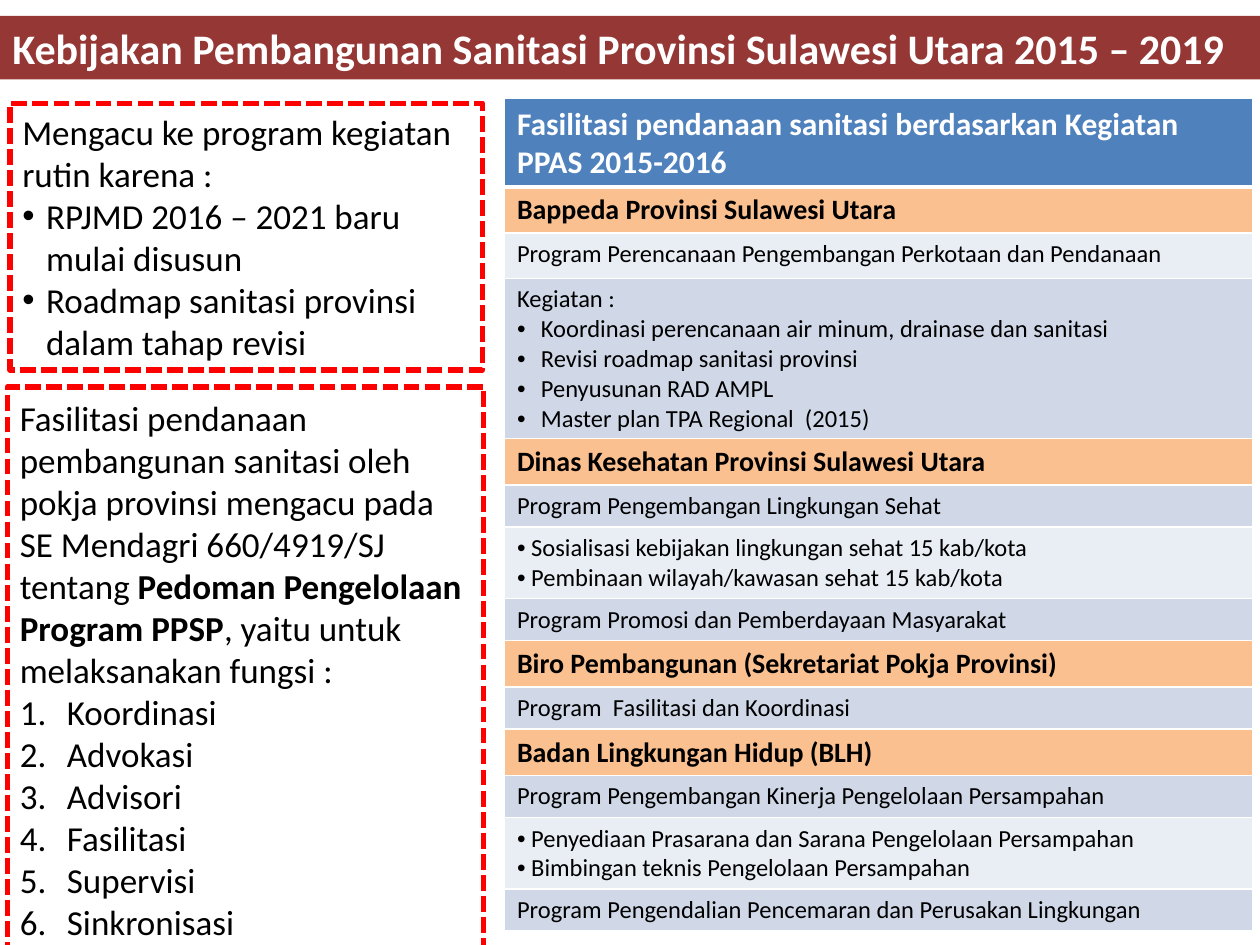
from lxml.etree import SubElement
from pptx import Presentation
from pptx.dml.color import RGBColor
from pptx.enum.dml import MSO_LINE_DASH_STYLE as Dash
from pptx.enum.shapes import MSO_SHAPE as Shape
from pptx.enum.text import MSO_AUTO_SIZE as AutoSize, PP_ALIGN as Align
from pptx.oxml import parse_xml
from pptx.oxml.ns import nsdecls, qn
from pptx.util import Cm, Pt

FONT = "Calibri"
COLORS = {
    "banner": "953735", "dash": "FF0000", "white": "FFFFFF", "black": "000000",
    "header": "4F81BD", "agency": "FAC090", "light": "E9EDF4", "dark": "D0D8E8",
}
HANGING = Cm(0.48)
NUMBER_INDENT = Cm(0.95)

REASONS = [
    "Mengacu ke program kegiatan rutin karena :",
    ("•", "RPJMD 2016 – 2021 baru mulai disusun"),
    ("•", "Roadmap sanitasi provinsi dalam tahap revisi"),
]
GUIDELINE = [
    ["Fasilitasi pendanaan pembangunan sanitasi oleh pokja provinsi mengacu pada "
     "SE Mendagri 660/4919/SJ  tentang ",
     ("Pedoman Pengelolaan Program PPSP", True),
     ", yaitu untuk melaksanakan fungsi :"],
]
FUNCTIONS = ["Koordinasi", "Advokasi", "Advisori", "Fasilitasi", "Supervisi", "Sinkronisasi"]

# Row kind: fill, text size, bold, text colour
ROW_KINDS = {
    "header": ("header", 18, True, "white"),
    "agency": ("agency", 16, True, "black"),
    "light": ("light", 14, False, "black"),
    "dark": ("dark", 14, False, "black"),
}
# Row: kind, height in cm, paragraphs, hanging indent of its bullets
ROWS = [
    ("header", 1.77, ["Fasilitasi pendanaan sanitasi berdasarkan Kegiatan PPAS 2015-2016"], 0),
    ("agency", 0.93, ["Bappeda Provinsi Sulawesi Utara"], 0),
    ("light", 0.91, ["Program Perencanaan Pengembangan Perkotaan dan Pendanaan"], 0),
    ("dark", 3.23, [
        "Kegiatan :",
        ("•", "Koordinasi perencanaan air minum, drainase dan sanitasi"),
        ("•", "Revisi roadmap sanitasi provinsi"),
        ("•", "Penyusunan RAD AMPL"),
        ("•", "Master plan TPA Regional  (2015)")], HANGING),
    ("agency", 0.93, ["Dinas Kesehatan Provinsi Sulawesi Utara"], 0),
    ("dark", 0.85, ["Program Pengembangan Lingkungan Sehat"], 0),
    ("light", 1.44, [
        ("•", " Sosialisasi kebijakan lingkungan sehat 15 kab/kota"),
        ("•", " Pembinaan wilayah/kawasan sehat 15 kab/kota")], 0),
    ("dark", 0.85, ["Program Promosi dan Pemberdayaan Masyarakat"], 0),
    ("agency", 0.93, ["Biro Pembangunan (Sekretariat Pokja Provinsi)"], 0),
    ("dark", 0.85, ["Program  Fasilitasi dan Koordinasi"], 0),
    ("agency", 0.93, ["Badan Lingkungan Hidup (BLH)"], 0),
    ("dark", 0.85, ["Program Pengembangan Kinerja Pengelolaan Persampahan"], 0),
    ("light", 1.44, [
        ("•", " Penyediaan Prasarana dan Sarana Pengelolaan Persampahan"),
        ("•", " Bimbingan teknis Pengelolaan Persampahan")], 0),
    ("dark", 0.85, ["Program Pengendalian Pencemaran dan Perusakan Lingkungan"], 0),
]


def rgb(name):
    return RGBColor.from_string(COLORS[name])


def set_bullet(paragraph, marker, indent):
    """Give a paragraph a bullet character, or automatic numbering for "1."."""
    properties = paragraph._p.get_or_add_pPr()
    properties.set("marL", str(int(indent)))
    properties.set("indent", str(-int(indent)))
    if marker == "1.":
        SubElement(properties, qn("a:buFont"), typeface="+mj-lt")
        SubElement(properties, qn("a:buAutoNum"), type="arabicPeriod")
    else:
        SubElement(properties, qn("a:buFont"), typeface="Arial")
        SubElement(properties, qn("a:buChar"), char=marker)


def write_text(frame, items, size=20, bold=False, color="black", indent=0):
    """Write one paragraph per item: a string, a (marker, text) pair or a list of runs."""
    frame.word_wrap = True
    for index, item in enumerate(items):
        paragraph = frame.paragraphs[0] if index == 0 else frame.add_paragraph()
        paragraph.alignment = Align.LEFT
        if isinstance(item, tuple):
            marker, item = item
            set_bullet(paragraph, marker, indent)
        for part in item if isinstance(item, list) else [item]:
            text, is_bold = part if isinstance(part, tuple) else (part, bold)
            run = paragraph.add_run()
            run.text = text
            run.font.name = FONT
            run.font.size = Pt(size)
            run.font.bold = is_bold
            run.font.color.rgb = rgb(color)


def add_box(slide, left, top, width, height, items, fill=None, dash=None, **text_format):
    box = slide.shapes.add_shape(Shape.RECTANGLE, Cm(left), Cm(top), Cm(width), Cm(height))
    box.shadow.inherit = False
    if fill:
        box.fill.solid()
        box.fill.fore_color.rgb = rgb(fill)
    else:
        box.fill.background()
    if dash:
        box.line.color.rgb = rgb(dash)
        box.line.width = Pt(3)
        box.line.dash_style = Dash.SQUARE_DOT
    else:
        box.line.fill.background()
    write_text(box.text_frame, items, **text_format)
    box.text_frame.auto_size = AutoSize.SHAPE_TO_FIT_TEXT


def set_borders(cell, top=1, bottom=1):
    properties = cell._tc.get_or_add_tcPr()
    widths = {"lnL": 1, "lnR": 1, "lnT": top, "lnB": bottom}
    for index, (side, width) in enumerate(widths.items()):
        properties.insert(index, parse_xml(
            f'<a:{side} {nsdecls("a")} w="{Pt(width)}"><a:solidFill>'
            f'<a:srgbClr val="{COLORS["white"]}"/></a:solidFill></a:{side}>'))


def add_funding_table(slide, left, top, width):
    height = sum(row[1] for row in ROWS)
    table = slide.shapes.add_table(
        len(ROWS), 1, Cm(left), Cm(top), Cm(width), Cm(height)).table
    for index, (kind, row_height, items, indent) in enumerate(ROWS):
        fill, size, bold, color = ROW_KINDS[kind]
        table.rows[index].height = Cm(row_height)
        cell = table.cell(index, 0)
        cell.fill.solid()
        cell.fill.fore_color.rgb = rgb(fill)
        set_borders(cell, top=3 if index == 1 else 1, bottom=3 if index == 0 else 1)
        write_text(cell.text_frame, items, size=size, bold=bold, color=color, indent=indent)


def main():
    presentation = Presentation()
    presentation.slide_width = Cm(25.4)
    presentation.slide_height = Cm(19.05)
    slide = presentation.slides.add_slide(presentation.slide_layouts[6])

    add_box(slide, 0, 0.32, 25.4, 1.28,
            ["Kebijakan Pembangunan Sanitasi Provinsi Sulawesi Utara 2015 – 2019"],
            fill="banner", size=24, bold=True, color="white")
    add_box(slide, 0.2, 2.08, 9.53, 5.38, REASONS, dash="dash", indent=HANGING)
    add_box(slide, 0.15, 7.8, 9.6, 11.38,
            GUIDELINE + [("1.", name) for name in FUNCTIONS],
            dash="dash", indent=NUMBER_INDENT)
    add_funding_table(slide, 10.17, 1.99, 15.08)

    presentation.save("out.pptx")


if __name__ == "__main__":
    main()
